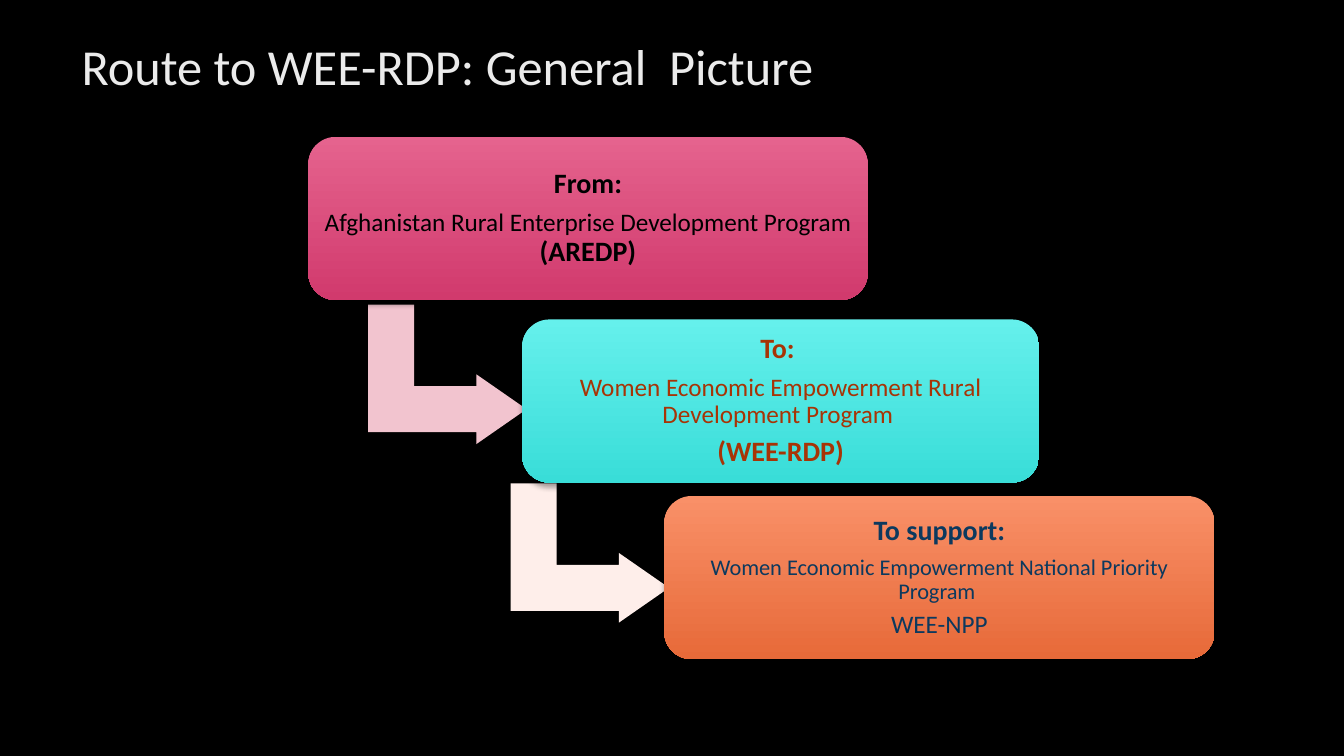
from lxml import etree
from pptx import Presentation
from pptx import util as u
from pptx.dml.color import RGBColor
from pptx.enum import shapes, text
from pptx.oxml.ns import qn

COLOURS = {
    "background": "000000", "title": "EBEBEB", "shadow": "000000",
    "from_top": "E5638E", "from_bottom": "D13A6D", "from_text": "000000",
    "to_top": "65F0EC", "to_bottom": "39DDD8", "to_text": "A73406",
    "support_top": "F99068", "support_bottom": "E76A39", "support_text": "0C395E",
    "from_arrow": "F2C4CF", "to_arrow": "FEEEEA",
}
FONT = "Calibri"
BOX_HEIGHT = 4.11
ARROW_SIZE = (3.51, 3.99)
ARROW_ADJUSTMENTS = (0.33, 0.25, 0.36)

STEPS = [
    ("from", (7.77, 3.45, 14.1), (9.52, 7.44), [
        [("From:", 20, True)],
        [("Afghanistan Rural Enterprise Development Program ", 18, False),
         ("(AREDP)", 20, True)],
    ]),
    ("to", (13.16, 8.05, 13.03), (13.11, 11.94), [
        [("To: ", 20, True)],
        [("Women Economic Empowerment Rural Development Program ", 18, False)],
        [("(WEE-RDP)", 20, True)],
    ]),
    ("support", (16.74, 12.5, 13.87), None, [
        [("To support:", 20, True)],
        [("Women Economic Empowerment National Priority Program ", 16, False)],
        [("WEE-NPP", 18, False)],
    ]),
]


def rgb(name):
    return RGBColor.from_string(COLOURS[name])


def style_run(run, size, colour, bold=False):
    run.font.name = FONT
    run.font.size = u.Pt(size)
    run.font.bold = bold
    run.font.color.rgb = rgb(colour)


def add_soft_shadow(shape):
    shape.shadow.inherit = False
    effects = shape._element.spPr.find(qn("a:effectLst"))
    shadow = etree.SubElement(
        effects, qn("a:outerShdw"), blurRad=str(u.Pt(4)), dist=str(u.Pt(3)),
        dir="5400000", rotWithShape="0")
    colour = etree.SubElement(shadow, qn("a:srgbClr"), val=COLOURS["shadow"])
    etree.SubElement(colour, qn("a:alpha"), val="35000")


def add_title(slide, wording):
    title = slide.shapes.title
    title.left, title.top = u.Cm(1.8), u.Cm(0.58)
    title.width, title.height = u.Cm(26.14), u.Cm(1.96)
    frame = title.text_frame
    frame.text = wording
    frame.auto_size = text.MSO_AUTO_SIZE.NONE
    frame.vertical_anchor = text.MSO_ANCHOR.BOTTOM
    frame.paragraphs[0].alignment = text.PP_ALIGN.LEFT
    style_run(frame.paragraphs[0].runs[0], 36, "title")


def add_arrow(slide, position, colour):
    arrow = slide.shapes.add_shape(
        shapes.MSO_SHAPE.BENT_UP_ARROW, *map(u.Cm, position + ARROW_SIZE))
    arrow.rotation = 90
    for index, value in enumerate(ARROW_ADJUSTMENTS):
        arrow.adjustments[index] = value
    arrow.fill.solid()
    arrow.fill.fore_color.rgb = rgb(colour)
    arrow.line.fill.background()
    add_soft_shadow(arrow)


def add_program_box(slide, step, place, paragraphs):
    box = slide.shapes.add_shape(
        shapes.MSO_SHAPE.ROUNDED_RECTANGLE, *map(u.Cm, place + (BOX_HEIGHT,)))
    box.fill.gradient()
    box.fill.gradient_angle = 270
    for stop, end in zip(box.fill.gradient_stops, ("top", "bottom")):
        stop.color.rgb = rgb(f"{step}_{end}")
    box.line.fill.background()
    add_soft_shadow(box)
    frame = box.text_frame
    frame.word_wrap = True
    frame.vertical_anchor = text.MSO_ANCHOR.MIDDLE
    frame.margin_left = frame.margin_right = u.Cm(0.2)
    frame.margin_top = frame.margin_bottom = u.Cm(0.2)
    for index, pieces in enumerate(paragraphs):
        paragraph = frame.add_paragraph() if index else frame.paragraphs[0]
        paragraph.alignment = text.PP_ALIGN.CENTER
        paragraph.line_spacing = 0.9
        paragraph.space_after = u.Pt(0.35 * pieces[0][1])
        for wording, size, bold in pieces:
            run = paragraph.add_run()
            run.text = wording
            style_run(run, size, f"{step}_text", bold)


def main():
    deck = Presentation()
    deck.slide_width, deck.slide_height = u.Cm(33.87), u.Cm(19.05)
    slide = deck.slides.add_slide(deck.slide_layouts.get_by_name("Title Only"))
    slide.background.fill.solid()
    slide.background.fill.fore_color.rgb = rgb("background")
    add_title(slide, "Route to WEE-RDP: General  Picture")
    for step, place, arrow_position, paragraphs in STEPS:
        if arrow_position:
            add_arrow(slide, arrow_position, f"{step}_arrow")
        add_program_box(slide, step, place, paragraphs)
    deck.save("out.pptx")


if __name__ == "__main__":
    main()
